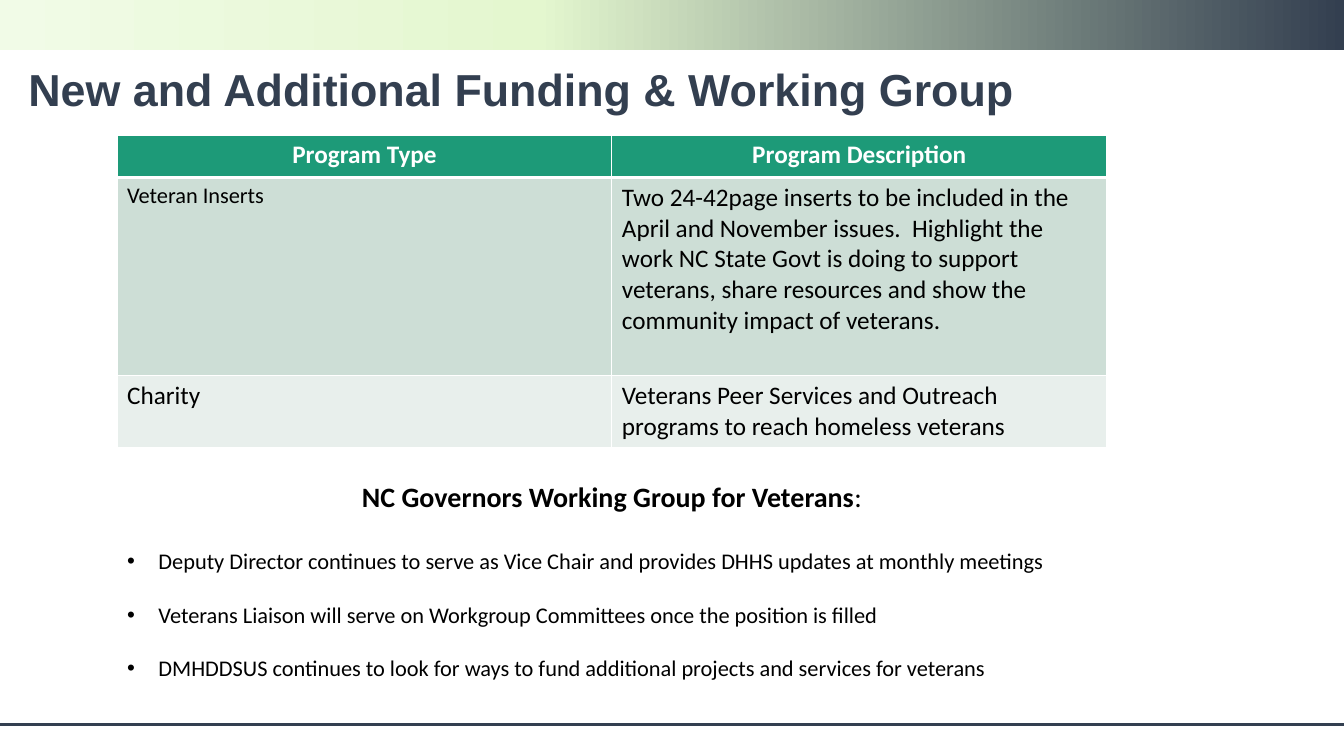
from copy import deepcopy

from lxml import etree
from pptx import Presentation
from pptx.dml.color import RGBColor
from pptx.enum.shapes import MSO_CONNECTOR, MSO_SHAPE
from pptx.enum.text import MSO_ANCHOR, MSO_AUTO_SIZE, PP_ALIGN
from pptx.oxml.ns import qn
from pptx.util import Cm, Pt

HEADLINE = "New and Additional Funding & Working Group"
PROGRAMS = [
    [("Program Type", 18), ("Program Description", 18)],
    [("Veteran Inserts", 16),
     ("Two 24-42page inserts to be included in the April and November issues.  "
      "Highlight the work NC State Govt is doing to support veterans, share "
      "resources and show the community impact of veterans.", 18)],
    [("Charity", 18),
     ("Veterans Peer Services and Outreach programs to reach homeless veterans", 18)],
]
GROUP_NAME = "NC Governors Working Group for Veterans"
GROUP_UPDATES = [
    "Deputy Director continues to serve as Vice Chair and provides DHHS updates at monthly meetings",
    "Veterans Liaison will serve on Workgroup Committees once the position is filled",
    "DMHDDSUS continues to look for ways to fund additional projects and services for veterans",
]

NAVY = RGBColor(0x33, 0x3F, 0x50)
LIME = RGBColor(0xE4, 0xF7, 0xCF)
PALE_LIME = RGBColor(0xF1, 0xFB, 0xE7)
GREEN = RGBColor(0x1D, 0x9A, 0x78)
SAGE = RGBColor(0xCD, 0xDE, 0xD6)
MIST = RGBColor(0xE8, 0xEF, 0xEC)
WHITE = RGBColor(0xFF, 0xFF, 0xFF)
BLACK = RGBColor(0, 0, 0)
BAND_STOPS = [(0, NAVY), (0.6, LIME), (1, PALE_LIME)]
ROW_FILLS = [GREEN, SAGE, MIST]

LEFT, CENTER = PP_ALIGN.LEFT, PP_ALIGN.CENTER
TOP, MIDDLE = MSO_ANCHOR.TOP, MSO_ANCHOR.MIDDLE
NO_AUTOFIT = MSO_AUTO_SIZE.NONE
RECTANGLE, STRAIGHT = MSO_SHAPE.RECTANGLE, MSO_CONNECTOR.STRAIGHT

SLIDE_W, SLIDE_H = Cm(33.87), Cm(19.05)
BAND_H = Cm(1.27)
FOOTER_Y = Cm(18.26)
CONTENT_X, CONTENT_W = Cm(2.95), Cm(24.94)
TABLE_Y = Cm(3.4)
ROW_HEIGHTS = [Cm(1.07), Cm(5), Cm(1.78)]
GROUP_Y, GROUP_H = Cm(11.96), Cm(5.38)
BULLET_INDENT = Cm(0.79)


def write(paragraph, text, size=18, font="Calibri", color=BLACK, bold=False,
          align=LEFT, before=0, spacing=1.0):
    paragraph.alignment = align
    paragraph.space_before = Pt(before)
    paragraph.line_spacing = spacing
    run = paragraph.add_run()
    run.text = text
    run.font.size = Pt(size)
    run.font.name = font
    run.font.color.rgb = color
    run.font.bold = bold


def set_bullet(paragraph, bullet=None):
    indent = BULLET_INDENT if bullet else 0
    properties = paragraph._p.get_or_add_pPr()
    properties.set("marL", str(indent))
    properties.set("indent", str(-indent))
    if bullet:
        etree.SubElement(properties, qn("a:buFont")).set("typeface", "Arial")
        etree.SubElement(properties, qn("a:buChar")).set("char", bullet)
    else:
        etree.SubElement(properties, qn("a:buNone"))


def set_borders(cell, bottom=1):
    properties = cell._tc.get_or_add_tcPr()
    widths = {"a:lnL": 1, "a:lnR": 1, "a:lnT": 1, "a:lnB": bottom}
    for position, (side, width) in enumerate(widths.items()):
        line = etree.Element(qn(side), w=str(Pt(width)))
        fill = etree.SubElement(line, qn("a:solidFill"))
        etree.SubElement(fill, qn("a:srgbClr")).set("val", str(WHITE))
        properties.insert(position, line)


def place(shape, left, top, width, height, anchor):
    shape.left, shape.top, shape.width, shape.height = left, top, width, height
    frame = shape.text_frame
    frame.word_wrap = True
    frame.auto_size = NO_AUTOFIT
    frame.vertical_anchor = anchor
    return frame


def add_band(slide):
    band = slide.shapes.add_shape(RECTANGLE, 0, 0, SLIDE_W, BAND_H)
    band.shadow.inherit = False
    band.line.fill.background()
    band.fill.gradient()
    band.fill.gradient_angle = 180
    stops = next(band._element.spPr.iter(qn("a:gsLst")))
    stops.append(deepcopy(stops[-1]))
    for stop, (position, color) in zip(band.fill.gradient_stops, BAND_STOPS):
        stop.position = position
        stop.color.rgb = color


def add_footer_rule(slide):
    rule = slide.shapes.add_connector(STRAIGHT, 0, FOOTER_Y, SLIDE_W, FOOTER_Y)
    rule.line.color.rgb = NAVY
    rule.line.width = Pt(1.75)
    etree.SubElement(rule._element.spPr, qn("a:effectLst"))


def add_programs(slide):
    columns = len(PROGRAMS[0])
    table = slide.shapes.add_table(len(PROGRAMS), columns, CONTENT_X, TABLE_Y,
                                   CONTENT_W, sum(ROW_HEIGHTS)).table
    for column in table.columns:
        column.width = CONTENT_W // columns
    for r, program in enumerate(PROGRAMS):
        header = r == 0
        table.rows[r].height = ROW_HEIGHTS[r]
        for c, (text, size) in enumerate(program):
            cell = table.cell(r, c)
            cell.fill.solid()
            cell.fill.fore_color.rgb = ROW_FILLS[r]
            set_borders(cell, bottom=3 if header else 1)
            write(cell.text_frame.paragraphs[0], text, size=size, bold=header,
                  color=WHITE if header else BLACK, align=CENTER if header else LEFT)


def fill_group(body):
    frame = place(body, CONTENT_X, GROUP_Y, CONTENT_W, GROUP_H, TOP)
    heading = frame.paragraphs[0]
    write(heading, GROUP_NAME, size=20, bold=True, align=CENTER)
    write(heading, ":", size=20, align=CENTER)
    set_bullet(heading)
    for i, update in enumerate(GROUP_UPDATES):
        paragraph = frame.add_paragraph()
        write(paragraph, update, size=16, before=19 if i else 24.5)
        set_bullet(paragraph, "•")


def main():
    deck = Presentation()
    deck.slide_width, deck.slide_height = SLIDE_W, SLIDE_H
    slide = deck.slides.add_slide(deck.slide_layouts[1])
    add_band(slide)
    add_footer_rule(slide)
    title = place(slide.shapes.title, Cm(0.46), Cm(1.57), Cm(29.06), Cm(1.52), MIDDLE)
    write(title.paragraphs[0], HEADLINE, size=32, font="Arial", color=NAVY,
          bold=True, spacing=0.9)
    add_programs(slide)
    fill_group(slide.placeholders[1])
    deck.save("out.pptx")


if __name__ == "__main__":
    main()
